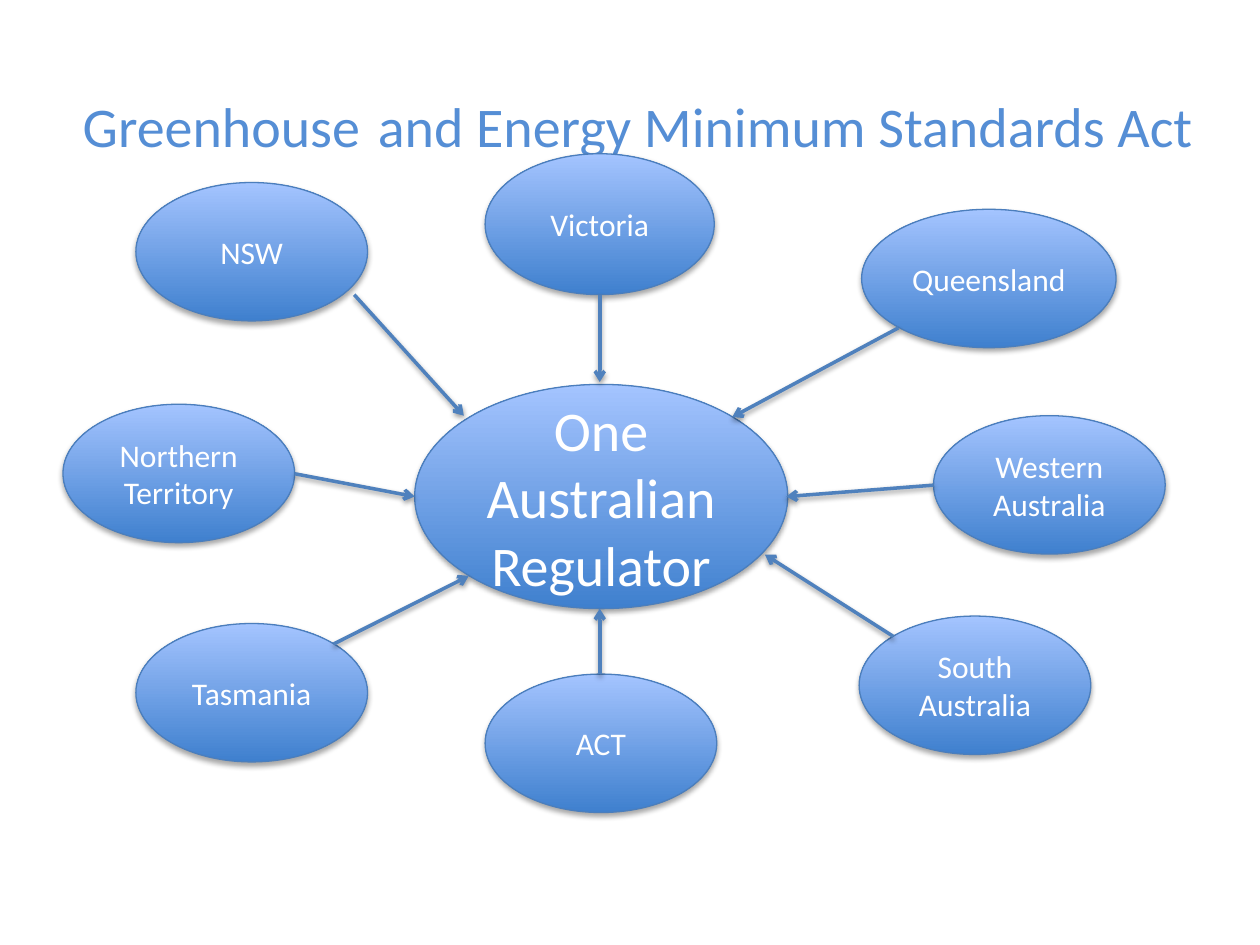
import pptx
import pptx.dml.color
import pptx.enum.shapes
import pptx.enum.text
import pptx.oxml
import pptx.oxml.ns
import pptx.util

Cm = pptx.util.Cm
Pt = pptx.util.Pt
RGBColor = pptx.dml.color.RGBColor

WHITE = RGBColor(0xFF, 0xFF, 0xFF)
BLACK = RGBColor(0x00, 0x00, 0x00)
TITLE_BLUE = RGBColor(0x55, 0x8E, 0xD5)
DEEP_BLUE = RGBColor(0x3F, 0x80, 0xCE)
PALE_BLUE = RGBColor(0xA4, 0xC4, 0xFF)
OUTLINE_BLUE = RGBColor(0x4B, 0x7E, 0xBC)
ARROW_BLUE = RGBColor(0x4F, 0x81, 0xBD)

FONT = "Calibri"
STATE_SIZE = (4.67, 2.79)

# Lengths in cm from the corner of the diagram:
# name, ellipse corner, ellipse size, arrow start, arrow end
STATES = [
    ("Queensland", (16.1, 1.12), (5.13, 2.79), (16.84, 3.51), (13.49, 5.31)),
    ("Victoria", (8.51, 0), (4.62, 2.84), (10.82, 2.84), (10.82, 4.6)),
    ("Tasmania", (1.47, 9.47), STATE_SIZE, (5.46, 9.88), (8.18, 8.51)),
    ("ACT", (8.51, 10.49), STATE_SIZE, (10.82, 10.49), (10.82, 9.17)),
    ("South Australia", (16.05, 9.32), STATE_SIZE, (16.74, 9.73), (14.15, 8.08)),
    ("NSW", (1.47, 0.58), STATE_SIZE, (5.87, 2.84), (8.08, 5.28)),
    ("Western Australia", (17.55, 5.28), STATE_SIZE, (17.55, 6.68), (14.58, 6.91)),
    ("Northern Territory", (0, 5.05), STATE_SIZE, (4.67, 6.45), (7.09, 6.91)),
]


def add_run(paragraph, text, size, color):
    run = paragraph.add_run()
    run.text = text
    run.font.name = FONT
    run.font.size = Pt(size)
    run.font.color.rgb = color


def add_shadow(shape, distance, opacity):
    """Cast a soft black shadow straight down; distance in points, opacity in percent."""
    shape._element.spPr.append(pptx.oxml.parse_xml(
        f'<a:effectLst {pptx.oxml.ns.nsdecls("a")}>'
        f'<a:outerShdw blurRad="{Pt(3.1)}" dist="{Pt(distance)}" dir="5400000" rotWithShape="0">'
        f'<a:srgbClr val="{BLACK}"><a:alpha val="{opacity * 1000}"/></a:srgbClr>'
        '</a:outerShdw></a:effectLst>'))


def add_title(slide, left, top, width, height):
    title = slide.shapes.title
    title.left, title.top, title.width, title.height = left, top, width, height
    title.text_frame.vertical_anchor = pptx.enum.text.MSO_ANCHOR.MIDDLE
    paragraph = title.text_frame.paragraphs[0]
    paragraph.alignment = pptx.enum.text.PP_ALIGN.CENTER
    add_run(paragraph, "Greenhouse", 32, TITLE_BLUE)
    add_run(paragraph, " ", 44, BLACK)
    add_run(paragraph, "and Energy Minimum Standards Act ", 32, TITLE_BLUE)


def add_ellipse(slide, left, top, width, height, lines, size):
    ellipse = slide.shapes.add_shape(
        pptx.enum.shapes.MSO_SHAPE.OVAL, left, top, width, height)
    ellipse.fill.gradient()
    ellipse.fill.gradient_angle = 90
    for stop, color in zip(ellipse.fill.gradient_stops, (DEEP_BLUE, PALE_BLUE)):
        stop.color.rgb = color
    ellipse.line.color.rgb = OUTLINE_BLUE
    ellipse.line.width = Pt(0.75)
    add_shadow(ellipse, 1.8, 35)
    frame = ellipse.text_frame
    frame.word_wrap = True
    frame.vertical_anchor = pptx.enum.text.MSO_ANCHOR.MIDDLE
    for index, line in enumerate(lines):
        paragraph = frame.add_paragraph() if index else frame.paragraphs[0]
        paragraph.alignment = pptx.enum.text.PP_ALIGN.CENTER
        add_run(paragraph, line, size, WHITE)


def add_arrow(slide, start_x, start_y, end_x, end_y):
    arrow = slide.shapes.add_connector(
        pptx.enum.shapes.MSO_CONNECTOR.STRAIGHT, start_x, start_y, end_x, end_y)
    arrow.line.color.rgb = ARROW_BLUE
    arrow.line.width = Pt(2)
    arrow.line._get_or_add_ln().append(pptx.oxml.parse_xml(
        f'<a:tailEnd {pptx.oxml.ns.nsdecls("a")} type="arrow"/>'))
    add_shadow(arrow, 1.6, 38)


def add_regulator_diagram(slide, left, top):
    """Place the states around the regulator, each with an arrow towards it."""
    def place(point):
        return left + Cm(point[0]), top + Cm(point[1])

    for name, corner, (width, height), _, _ in STATES:
        add_ellipse(slide, *place(corner), Cm(width), Cm(height), [name], 18)
    add_ellipse(slide, *place((7.09, 4.65)), Cm(7.52), Cm(4.52),
                ["One", "Australian Regulator"], 32)
    for _, _, _, start, end in STATES:
        add_arrow(slide, *place(start), *place(end))


def main():
    presentation = pptx.Presentation()
    presentation.slide_width = Cm(25.4)
    presentation.slide_height = Cm(19.05)
    slide = presentation.slides.add_slide(presentation.slide_layouts[5])
    add_title(slide, Cm(1.27), Cm(0.76), Cm(23.44), Cm(3.18))
    add_regulator_diagram(slide, Cm(1.27), Cm(3.1))
    presentation.save("out.pptx")


if __name__ == "__main__":
    main()
